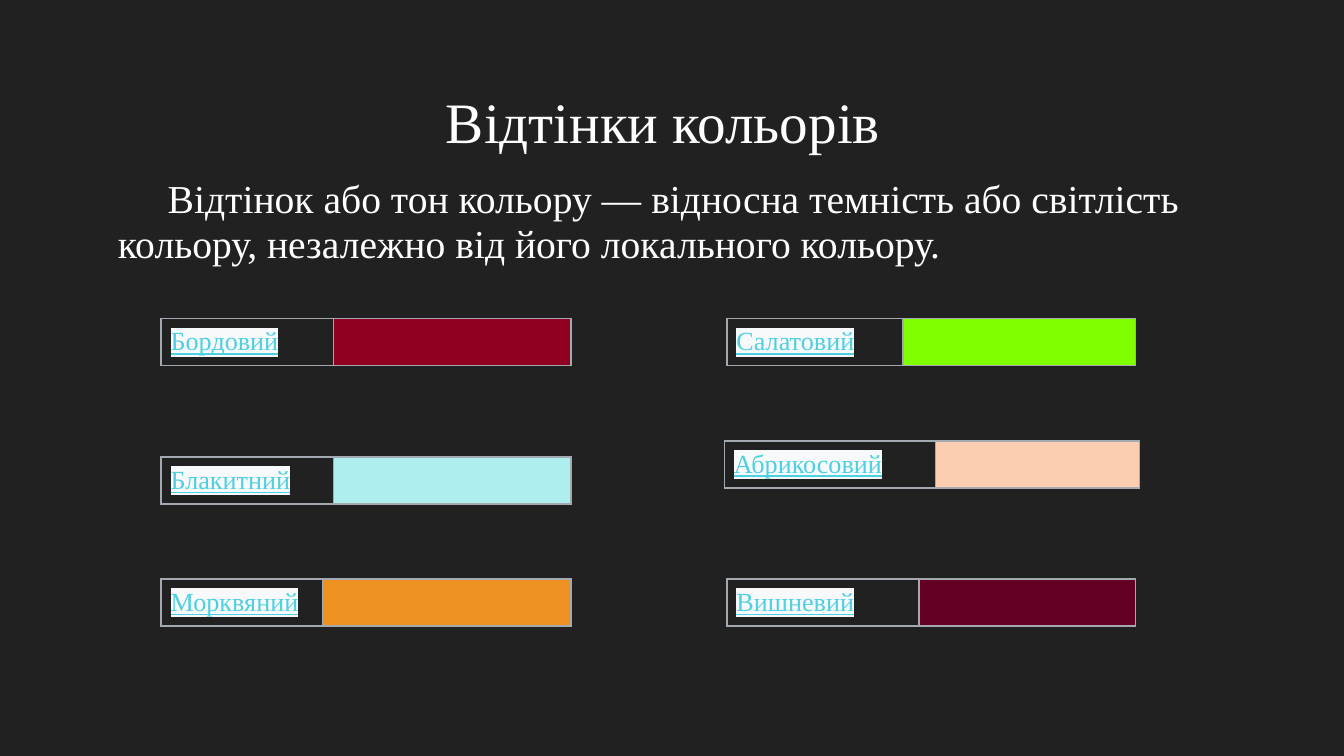
import pptx
import pptx.dml.color
import pptx.enum.text
import pptx.oxml
import pptx.oxml.ns
import pptx.util

Inches = pptx.util.Inches
Pt = pptx.util.Pt
RGB = pptx.dml.color.RGBColor

DARK = RGB(0x21, 0x21, 0x21)
WHITE = RGB(0xFF, 0xFF, 0xFF)
PALE = RGB(0xF8, 0xF9, 0xFA)
LINK = RGB(0x4D, 0xD0, 0xE1)
GREY = RGB(0xA2, 0xA9, 0xB1)
WINE = RGB(0x90, 0x00, 0x20)
LIME = RGB(0x7F, 0xFF, 0x00)
SKY = RGB(0xAF, 0xEE, 0xEE)
PEACH = RGB(0xFB, 0xCE, 0xB1)
CHERRY = RGB(0x64, 0x00, 0x23)
CARROT = RGB(0xED, 0x91, 0x21)

SHADES = [
    ("Бордовий", WINE, 1.2, 2.37, 1.28, 1.77),
    ("Салатовий", LIME, 5.41, 2.37, 1.31, 1.73),
    ("Блакитний", SKY, 1.2, 3.4, 1.28, 1.77),
    ("Абрикосовий", PEACH, 5.39, 3.28, 1.57, 1.52),
    ("Вишневий", CHERRY, 5.41, 4.31, 1.43, 1.61),
    ("Морквяний", CARROT, 1.2, 4.31, 1.2, 1.85),
]


class Deck:
    """Holds the style and the current slide."""

    font = "Times New Roman"
    height = 0.35

    def __init__(self, show):
        self.slide = show.slides.add_slide(show.slide_layouts[6])
        fill = self.slide.background.fill
        fill.solid()
        fill.fore_color.rgb = DARK

    def style(self, para, size, color, mark=None):
        font = para.runs[0].font
        font.name = self.font
        font.size = Pt(size)
        font.color.rgb = color
        if mark is not None:
            tag = pptx.oxml.parse_xml(
                f'<a:highlight {pptx.oxml.ns.nsdecls("a")}>'
                f'<a:srgbClr val="{mark}"/></a:highlight>')
            font._element.find(pptx.oxml.ns.qn("a:solidFill")).addnext(tag)
        return font

    def text(self, words, left, top, width, height, size, space, indent=0, mark=None):
        box = self.slide.shapes.add_textbox(
            Inches(left), Inches(top), Inches(width), Inches(height))
        frame = box.text_frame
        frame.word_wrap = True
        frame.margin_left = frame.margin_right = Inches(0.1)
        frame.margin_top = frame.margin_bottom = Inches(0.1)
        frame.text = words
        para = frame.paragraphs[0]
        para.line_spacing = space
        if indent:
            para._p.get_or_add_pPr().set("indent", str(Inches(indent)))
        self.style(para, size, WHITE, mark)

    def border(self, cell):
        props = cell._tc.get_or_add_tcPr()
        for spot, side in enumerate(("lnL", "lnR", "lnT", "lnB")):
            props.insert(spot, pptx.oxml.parse_xml(
                f'<a:{side} {pptx.oxml.ns.nsdecls("a")} w="{Pt(1)}">'
                f'<a:solidFill><a:srgbClr val="{GREY}"/></a:solidFill></a:{side}>'))

    def swatch(self, name, color, left, top, first, second):
        table = self.slide.shapes.add_table(
            1, 2, Inches(left), Inches(top),
            Inches(first + second), Inches(self.height)).table
        table.first_row = table.horz_banding = False
        table.columns[0].width = Inches(first)
        table.columns[1].width = Inches(second)
        label, patch = table.cell(0, 0), table.cell(0, 1)
        label.text_frame.text = name
        self.style(label.text_frame.paragraphs[0], 14, LINK, PALE).underline = True
        label.fill.background()
        patch.fill.solid()
        patch.fill.fore_color.rgb = color
        patch.text_frame.paragraphs[0].font.size = Pt(14)
        for cell in (label, patch):
            cell.margin_left = cell.margin_right = Inches(0.07)
            cell.margin_top = cell.margin_bottom = Inches(0.03)
            cell.vertical_anchor = pptx.enum.text.MSO_ANCHOR.MIDDLE
            self.border(cell)


def main():
    show = pptx.Presentation()
    show.slide_width = Inches(10)
    show.slide_height = Inches(10) * 9 // 16
    deck = Deck(show)
    deck.text("Відтінки кольорів", 3.22, 0.47, 3.56, 0.63, 30.6, 1.15)
    deck.text("Відтінок або тон кольору — відносна темність або світлість "
              "кольору, незалежно від його локального кольору.",
              0.78, 1.22, 8.96, 1.32, 21.2, 0.95, indent=0.37, mark=DARK)
    for shade in SHADES:
        deck.swatch(*shade)
    show.save("out.pptx")


if __name__ == "__main__":
    main()
